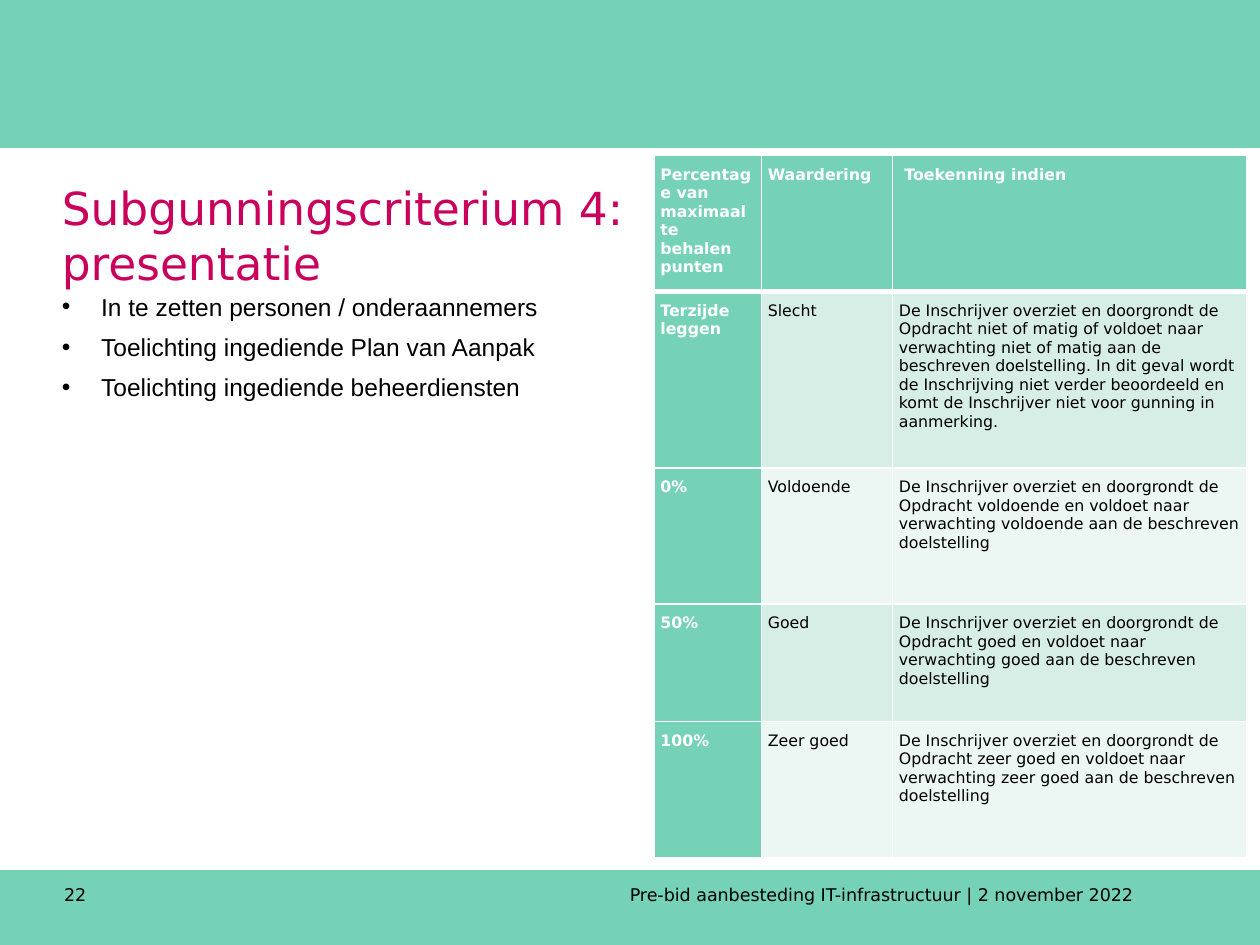
from dataclasses import dataclass

from lxml import etree
from pptx import Presentation
from pptx.dml.color import RGBColor
from pptx.enum import shapes, text
from pptx.oxml import ns
from pptx.util import Pt

COLORS = {
    "mint": "76D2B6",
    "light": "D6EEE5",
    "pale": "ECF7F3",
    "magenta": "CA005D",
    "black": "000000",
    "white": "FFFFFF",
}
SANS, BODY = "DejaVu Sans", "Arial"


@dataclass
class Box:
    left: float
    top: float
    width: float
    height: float

    def lengths(self) -> tuple:
        return Pt(self.left), Pt(self.top), Pt(self.width), Pt(self.height)


@dataclass
class Style:
    font: str
    size: float
    color: str
    bold: bool = False


@dataclass
class Rating:
    percentage: str
    grade: str
    reason: str
    height: float


BANDS = [Box(0, 0, 720, 84.5), Box(0, 497.3, 720, 42.7)]
TITLE_BOX = Box(28.1, 99.4, 339.1, 44.6)
LIST_BOX = Box(28.1, 160.6, 339.1, 347.8)
TABLE_BOX = Box(373.7, 88.9, 338.4, 401)
SMALL = Style(SANS, 10, "black")
LABELS = [
    (Box(352.8, 501.8, 327.6, 28.1), "Pre-bid aanbesteding IT-infrastructuur |\u00a02 november 2022"),
    (Box(29.5, 501.8, 56.2, 28.1), "22"),
]
TOPICS = [
    "In te zetten personen / onderaannemers",
    "Toelichting ingediende Plan van Aanpak",
    "Toelichting ingediende beheerdiensten",
]
OPENING = "De Inschrijver overziet en doorgrondt de Opdracht "
COLUMN_WIDTHS = [61.4, 74.9, 202.2]
RATINGS = [
    Rating("Percentage van maximaal te behalen punten", "Waardering", " Toekenning indien", 77.8),
    Rating("Terzijde leggen", "Slecht", OPENING + "niet of matig of voldoet naar verwachting "
           "niet of matig aan de beschreven doelstelling. In dit geval wordt de Inschrijving "
           "niet verder beoordeeld en komt de Inschrijver niet voor gunning in aanmerking.", 100.8),
] + [
    Rating(percentage, grade, f"{OPENING}{grade.lower()} en voldoet naar verwachting "
           f"{grade.lower()} aan de beschreven doelstelling", height)
    for percentage, grade, height in
    [("0%", "Voldoende", 77.8), ("50%", "Goed", 67), ("100%", "Zeer goed", 77.8)]
]


def rgb(name: str) -> RGBColor:
    return RGBColor.from_string(COLORS[name])


def add_run(paragraph, content: str, style: Style) -> None:
    run = paragraph.add_run()
    run.text = content
    run.font.name = style.font
    run.font.size = Pt(style.size)
    run.font.bold = style.bold
    run.font.color.rgb = rgb(style.color)


def prepare_frame(shape):
    frame = shape.text_frame
    frame.word_wrap = True
    frame.auto_size = text.MSO_AUTO_SIZE.NONE
    frame.vertical_anchor = text.MSO_ANCHOR.TOP
    return frame


def place(shape, box: Box) -> None:
    shape.left, shape.top, shape.width, shape.height = box.lengths()


def add_band(slide, box: Box) -> None:
    shape = slide.shapes.add_shape(shapes.MSO_SHAPE.RECTANGLE, *box.lengths())
    shape.shadow.inherit = False
    shape.fill.solid()
    shape.fill.fore_color.rgb = rgb("mint")
    shape.line.fill.background()
    # Bands lie behind the placeholders
    slide.shapes.element.insert(2, shape.element)


def add_label(slide, box: Box, content: str) -> None:
    frame = prepare_frame(slide.shapes.add_textbox(*box.lengths()))
    add_run(frame.paragraphs[0], content, SMALL)


def add_bullet(paragraph, content: str, is_first: bool) -> None:
    properties = paragraph._p.get_or_add_pPr()
    properties.set("marL", str(Pt(22.5)))
    properties.set("indent", str(-Pt(22.5)))
    etree.SubElement(properties, ns.qn("a:buFont"), typeface=BODY)
    etree.SubElement(properties, ns.qn("a:buChar"), char="•")
    paragraph.line_spacing = 1.15
    paragraph.space_before = Pt(0 if is_first else 3.7)
    add_run(paragraph, content, Style(BODY, 14, "black"))


def set_borders(cell, bottom: float) -> None:
    properties = cell._tc.get_or_add_tcPr()
    widths = {"lnL": 1, "lnR": 1, "lnT": 1, "lnB": bottom}
    for index, (tag, width) in enumerate(widths.items()):
        line = etree.Element(ns.qn(f"a:{tag}"), w=str(Pt(width)))
        fill = etree.SubElement(line, ns.qn("a:solidFill"))
        etree.SubElement(fill, ns.qn("a:srgbClr"), val=COLORS["white"])
        properties.insert(index, line)


def fill_cell(cell, content: str, fill: str, style: Style, bottom: float) -> None:
    cell.margin_left = cell.margin_right = Pt(3.7)
    cell.margin_top = cell.margin_bottom = Pt(5.7)
    cell.fill.solid()
    cell.fill.fore_color.rgb = rgb(fill)
    set_borders(cell, bottom)
    add_run(cell.text_frame.paragraphs[0], content, style)


def add_ratings(slide) -> None:
    frame = slide.shapes.add_table(len(RATINGS), len(COLUMN_WIDTHS), *TABLE_BOX.lengths())
    table = frame.table
    for column, width in zip(table.columns, COLUMN_WIDTHS):
        column.width = Pt(width)
    for row, rating in enumerate(RATINGS):
        table.rows[row].height = Pt(rating.height)
        # The rows above and below the header rule share its weight
        bottom = 3 if row == 0 else 1
        for column, content in enumerate([rating.percentage, rating.grade, rating.reason]):
            is_header = row == 0 or column == 0
            fill = "mint" if is_header else ("light" if row % 2 else "pale")
            style = Style(SANS, 9, "white" if is_header else "black", is_header)
            fill_cell(table.cell(row, column), content, fill, style, bottom)
            if row == 1:
                border = table.cell(row, column)._tc.tcPr.find(ns.qn("a:lnT"))
                border.set("w", str(Pt(3)))


def main() -> None:
    presentation = Presentation()
    presentation.slide_width, presentation.slide_height = Pt(720), Pt(540)
    slide = presentation.slides.add_slide(presentation.slide_layouts[1])

    # Background bands
    for band in BANDS:
        add_band(slide, band)

    # Title
    title = slide.shapes.title
    place(title, TITLE_BOX)
    paragraph = prepare_frame(title).paragraphs[0]
    paragraph.alignment = text.PP_ALIGN.LEFT
    add_run(paragraph, "Subgunningscriterium 4: presentatie", Style(SANS, 26, "magenta"))

    # Topics
    body = slide.placeholders[1]
    place(body, LIST_BOX)
    frame = prepare_frame(body)
    for index, topic in enumerate(TOPICS):
        paragraph = frame.add_paragraph() if index else frame.paragraphs[0]
        add_bullet(paragraph, topic, index == 0)

    # Footer and ratings table
    for box, content in LABELS:
        add_label(slide, box, content)
    add_ratings(slide)

    presentation.save("out.pptx")


if __name__ == "__main__":
    main()
